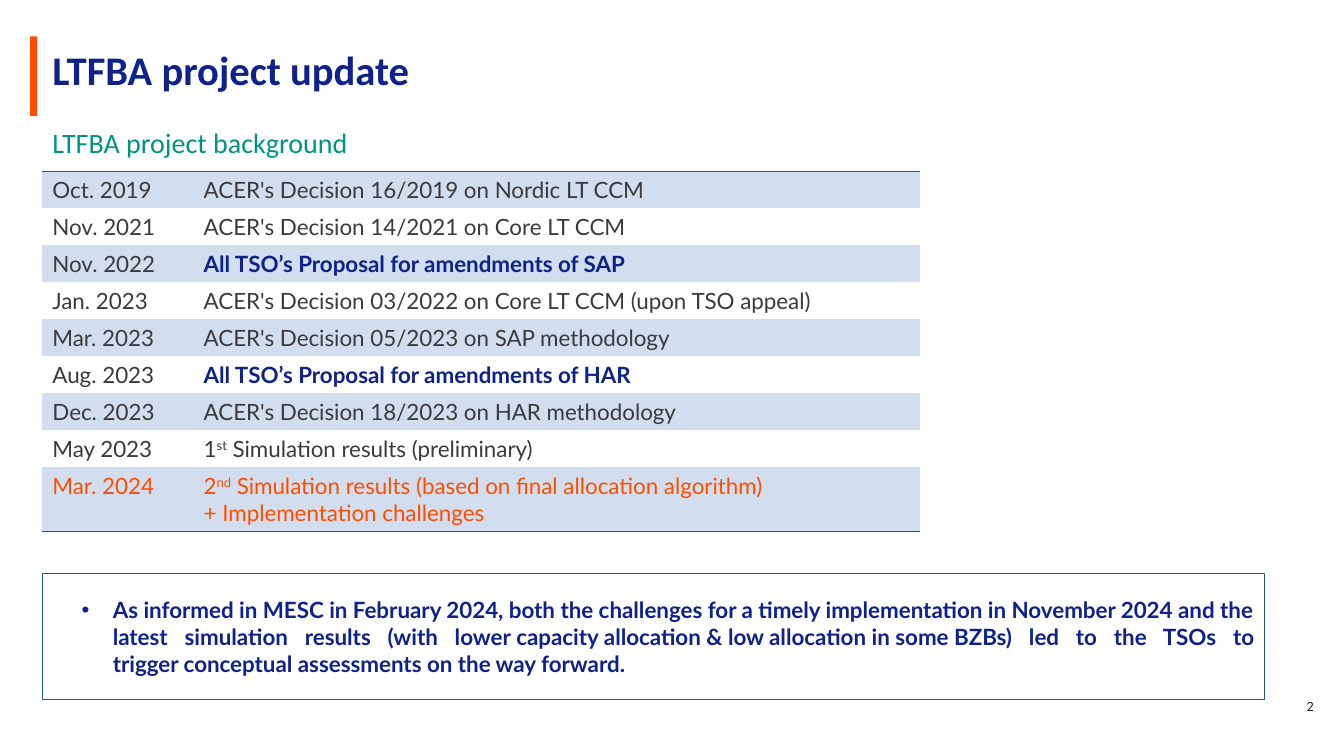
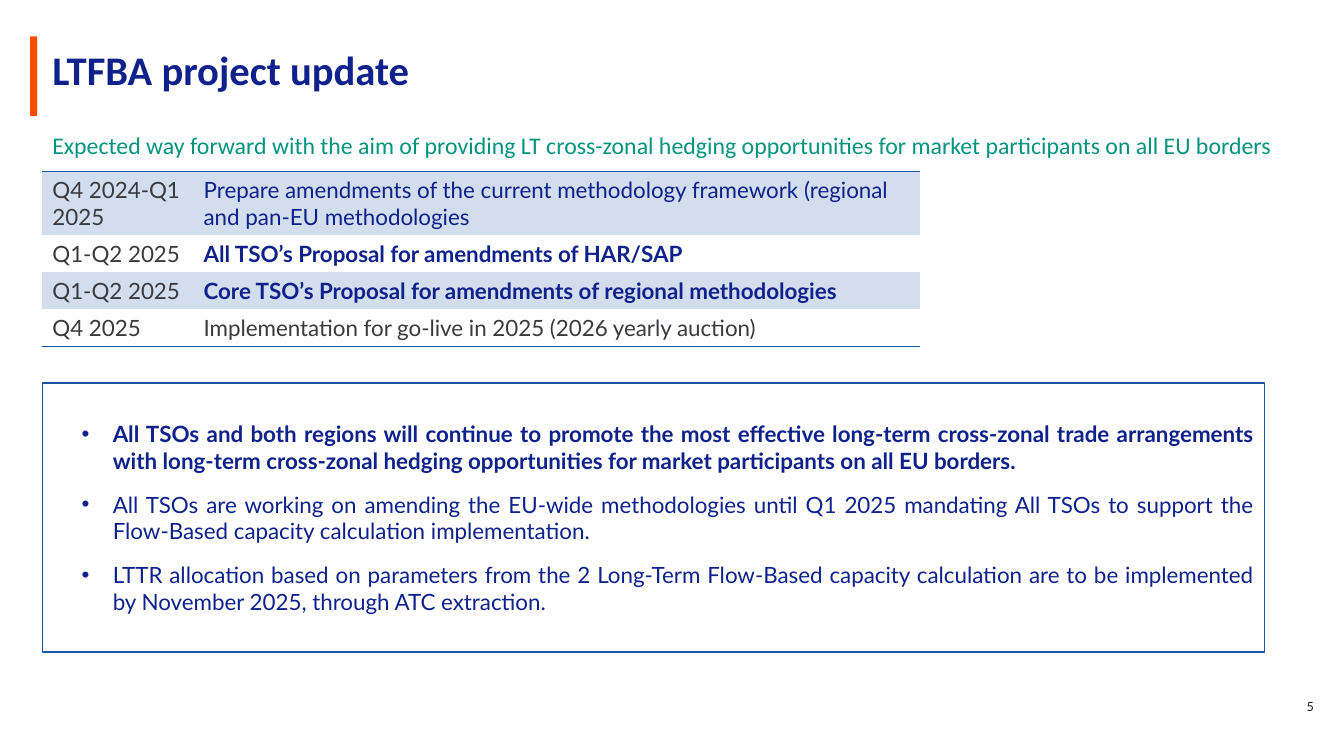
"""Build the two LTFBA project update slides."""
from lxml import etree
from pptx import Presentation
from pptx.dml.color import RGBColor
from pptx.enum.shapes import MSO_SHAPE
from pptx.enum.text import MSO_ANCHOR, PP_ALIGN
from pptx.oxml import parse_xml
from pptx.oxml.ns import nsdecls, qn
from pptx.util import Emu, Pt

RECTANGLE = MSO_SHAPE.RECTANGLE
MIDDLE, BOTTOM = MSO_ANCHOR.MIDDLE, MSO_ANCHOR.BOTTOM
LEFT, RIGHT, JUSTIFY = PP_ALIGN.LEFT, PP_ALIGN.RIGHT, PP_ALIGN.JUSTIFY

PX = 9144
NAVY, ORANGE, GREEN = "0F218B", "FF4D00", "00947F"
GREY, BLACK, BLUE, BAND = "3A3A3F", "1D1D20", "2054A5", "D2DDED"
HEADING_FONT, BODY_FONT = "Calibri", "Lato"
NO_STYLE = "{2D5ABB26-0587-4C30-8999-92F81FD0307C}"
NO_BREAK_SPACE = chr(160)
MARGIN = 42
COLUMNS = (150, 720)
LINE_HEIGHT, CELL_PADDING = 26, 10


def px(*lengths):
    return [Emu(length * PX) for length in lengths]


def add_run(paragraph, text, size, colour, bold=False, font=BODY_FONT):
    run = paragraph.add_run()
    run.text = text
    run.font.size = Pt(size)
    run.font.bold = bold
    run.font.name = font
    run.font.color.rgb = RGBColor.from_string(colour)
    return run


slides = [
    {
        "number": "2",
        "subtitle": "LTFBA project background",
        "subtitle_size": 20,
        "milestones": [
            ("Oct. 2019", "ACER's Decision 16/2019 on Nordic LT CCM", GREY, False, 1),
            ("Nov. 2021", "ACER's Decision 14/2021 on Core LT CCM", GREY, False, 1),
            ("Nov. 2022", "All TSO’s Proposal for amendments of SAP", NAVY, True, 1),
            ("Jan. 2023", "ACER's Decision 03/2022 on Core LT CCM (upon TSO appeal)", GREY, False, 1),
            ("Mar. 2023", "ACER's Decision 05/2023 on SAP methodology", GREY, False, 1),
            ("Aug. 2023", "All TSO’s Proposal for amendments of HAR", NAVY, True, 1),
            ("Dec. 2023", "ACER's Decision 18/2023 on HAR methodology", GREY, False, 1),
            ("May 2023", "1^st^ Simulation results (preliminary)", GREY, False, 1),
            ("Mar. 2024", "2^nd^ Simulation results (based on final allocation algorithm)\n"
             "+ Implementation challenges", ORANGE, False, 2),
        ],
        "message_box": (569, 125),
        "space_after": 6,
        "messages": [
            ("As informed in MESC in February 2024, both the challenges for a timely "
             "implementation in November 2024 and the latest simulation results (with "
             "lower~capacity~allocation~&~low~allocation~in~some~BZBs) led to the TSOs to "
             "trigger~conceptual assessments on the way forward.", True),
        ],
    },
    {
        "number": "5",
        "subtitle": "Expected way forward with the aim of providing LT cross-zonal hedging "
                    "opportunities for market participants on all EU borders",
        "subtitle_size": 17,
        "milestones": [
            ("Q4 2024-Q1 2025", "Prepare amendments of the current methodology framework "
             "(regional and pan-EU methodologies", NAVY, False, 2),
            ("Q1-Q2 2025", "All TSO’s Proposal for amendments of HAR/SAP", NAVY, True, 1),
            ("Q1-Q2 2025", "Core TSO’s Proposal for amendments of regional methodologies",
             NAVY, True, 1),
            ("Q4 2025", "Implementation for go-live in 2025 (2026 yearly auction)", GREY, False, 1),
        ],
        "message_box": (380, 267),
        "space_after": 12,
        "messages": [
            ("All TSOs and both regions will continue to promote the most effective long-term "
             "cross-zonal trade arrangements with long-term cross-zonal hedging opportunities "
             "for market participants on all EU borders.", True),
            ("All TSOs are working on amending the EU-wide methodologies until Q1 2025 mandating "
             "All TSOs to support the Flow-Based capacity calculation implementation.", False),
            ("LTTR allocation based on parameters from the 2 Long-Term Flow-Based capacity "
             "calculation are to be implemented by November 2025, through ATC extraction.", False),
        ],
    },
]

prs = Presentation()
prs.slide_width, prs.slide_height = px(1333, 750)
title_only = prs.slide_layouts[5]

for content in slides:
    slide = prs.slides.add_slide(title_only)
    shapes = slide.shapes

    accent = shapes.add_shape(RECTANGLE, *px(30, 36, 7, 79))
    accent.shadow.inherit = False
    accent.fill.solid()
    accent.fill.fore_color.rgb = RGBColor.from_string(ORANGE)
    accent.line.fill.background()

    title = shapes.title
    title.left, title.top, title.width, title.height = px(MARGIN, 51, 1271, 39)
    subtitle = shapes.add_textbox(*px(MARGIN, 115, 1271, 48))
    page_number = shapes.add_textbox(*px(675, 682, 638, 40))
    for holder, text, size, colour, bold, font, spacing, align, anchor in (
        (title, "LTFBA project update", 29, NAVY, True, HEADING_FONT, 32, LEFT, MIDDLE),
        (subtitle, content["subtitle"], content["subtitle_size"], GREEN, False,
         HEADING_FONT, 26, LEFT, BOTTOM),
        (page_number, content["number"], 9, BLACK, False, BODY_FONT, 9, RIGHT, MIDDLE),
    ):
        holder.text_frame.word_wrap = True
        holder.text_frame.vertical_anchor = anchor
        paragraph = holder.text_frame.paragraphs[0]
        paragraph.alignment = align
        paragraph.line_spacing = Pt(spacing)
        add_run(paragraph, text, size, colour, bold, font)

    milestones = content["milestones"]
    heights = [lines * LINE_HEIGHT + CELL_PADDING for *_, lines in milestones]
    timeline = shapes.add_table(len(milestones), len(COLUMNS),
                                *px(MARGIN, 170, sum(COLUMNS), sum(heights))).table
    timeline.first_row = timeline.horz_banding = False
    timeline._tbl.tblPr.find(qn("a:tableStyleId")).text = NO_STYLE
    for column, width in zip(timeline.columns, COLUMNS):
        column.width = Emu(width * PX)

    for index, (date, event, colour, bold, _) in enumerate(milestones):
        timeline.rows[index].height = Emu(heights[index] * PX)
        date_colour = ORANGE if colour == ORANGE else GREY
        for column, (text, text_colour, text_bold) in enumerate(
                ((date, date_colour, False), (event, colour, bold))):
            cell = timeline.cell(index, column)
            if index % 2 == 0:
                cell.fill.solid()
                cell.fill.fore_color.rgb = RGBColor.from_string(BAND)
            else:
                cell.fill.background()
            for edge, edge_row in (("lnB", len(milestones) - 1), ("lnT", 0)):
                if index == edge_row:
                    cell._tc.get_or_add_tcPr().insert(0, parse_xml(
                        f'<a:{edge} {nsdecls("a")} w="12700"><a:solidFill>'
                        f'<a:srgbClr val="{BLUE}"/></a:solidFill></a:{edge}>'))
            for line_index, line in enumerate(text.split("\n")):
                frame = cell.text_frame
                paragraph = frame.add_paragraph() if line_index else frame.paragraphs[0]
                for part_index, part in enumerate(line.split("^")):
                    run = add_run(paragraph, part, 16, text_colour, text_bold)
                    if part_index % 2:
                        run.font._element.set("baseline", "30000")

    box_top, box_height = content["message_box"]
    message_box = shapes.add_shape(RECTANGLE, *px(MARGIN, box_top, 1212, box_height))
    message_box.shadow.inherit = False
    message_box.fill.background()
    message_box.line.color.rgb = RGBColor.from_string(BLUE)
    message_box.line.width = Pt(1)
    frame = message_box.text_frame
    frame.word_wrap = True
    frame.vertical_anchor = MIDDLE
    for index, (message, bold) in enumerate(content["messages"]):
        paragraph = frame.add_paragraph() if index else frame.paragraphs[0]
        properties = paragraph._p.get_or_add_pPr()
        properties.set("marL", str(60 * PX))
        properties.set("indent", str(-31 * PX))
        etree.SubElement(properties, qn("a:buFont")).set("typeface", "Arial")
        etree.SubElement(properties, qn("a:buChar")).set("char", "•")
        paragraph.alignment = JUSTIFY
        paragraph.space_after = Pt(content["space_after"])
        add_run(paragraph, message.replace("~", NO_BREAK_SPACE), 16, NAVY, bold)

prs.save("out.pptx")
